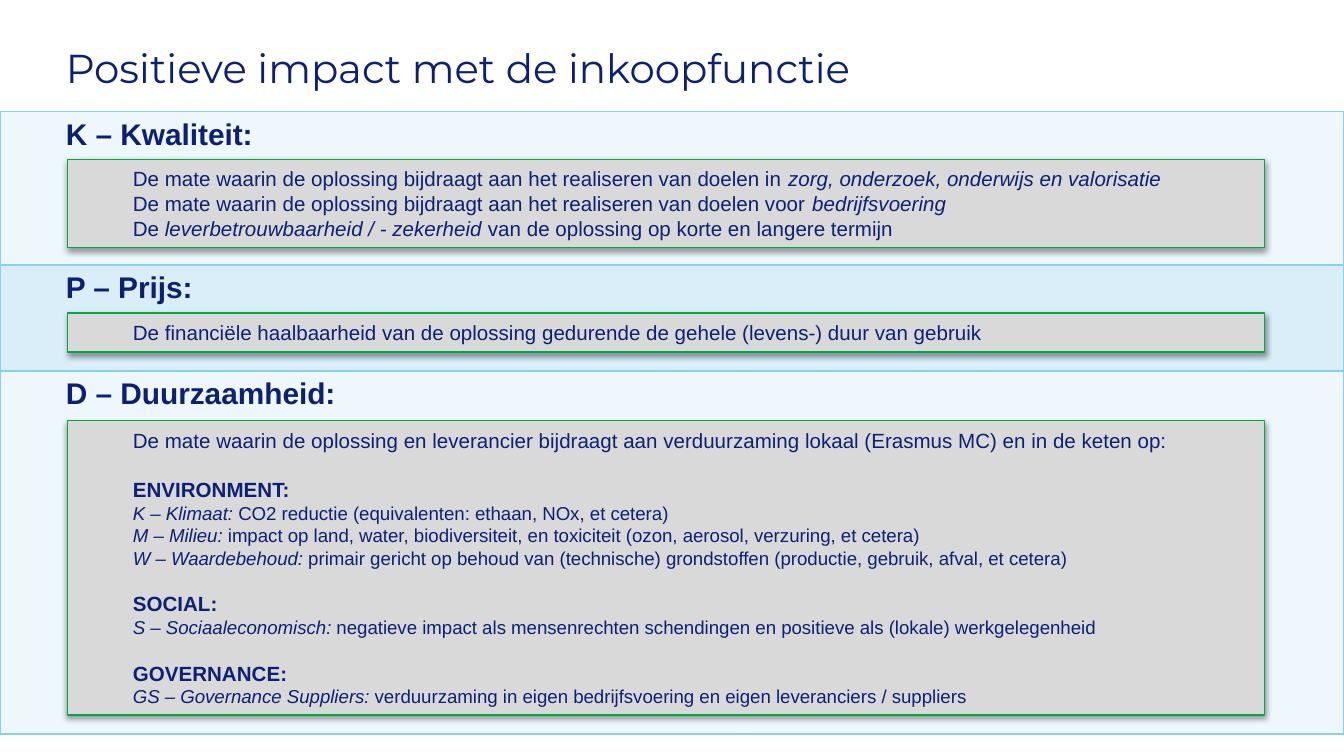
from dataclasses import dataclass

import pptx
import pptx.dml.color
import pptx.enum.shapes
import pptx.enum.text
import pptx.oxml
import pptx.oxml.ns
import pptx.util

EMU_PER_PX = 4572
WIDTH, HEIGHT = 2000, 1125
TABLE_TOP = 166
BOX_LEFT, BOX_WIDTH = 100, 1782
TEXT_INDENT = 78

COLORS = {
    "navy": "0C2074",
    "sky": "86D2ED",
    "pale": "EDF7FC",
    "light": "D9EEF8",
    "grey": "D9D9D9",
    "green": "00AA41",
    "black": "000000",
}


@dataclass(frozen=True)
class Run:
    text: str
    italic: bool = False


@dataclass(frozen=True)
class Line:
    runs: tuple[Run, ...]
    size: int = 11
    bold: bool = False
    space_before: int = 0


@dataclass(frozen=True)
class Section:
    heading: str
    row_height: int
    fill: str
    box_top: int
    box_height: int
    lines: tuple[Line, ...]


def plain(text: str) -> Line:
    return Line((Run(text),))


def category(text: str, space_before: int) -> Line:
    return Line((Run(text),), bold=True, space_before=space_before)


def criterion(label: str, text: str) -> Line:
    return Line((Run(label, True), Run(text)), size=10)


SECTIONS = (
    Section("K – Kwaliteit:", 228, "pale", 237, 131, (
        Line((Run("De mate waarin de oplossing bijdraagt aan het realiseren van doelen in "),
              Run("zorg, onderzoek, onderwijs en valorisatie", True))),
        Line((Run("De mate waarin de oplossing bijdraagt aan het realiseren van doelen voor "),
              Run("bedrijfsvoering", True))),
        Line((Run("De "), Run("leverbetrouwbaarheid / - zekerheid ", True),
              Run("van de oplossing op korte en langere termijn"))),
    )),
    Section("P – Prijs:", 158, "light", 466, 58, (
        plain("De financiële haalbaarheid van de oplossing gedurende de gehele (levens-) duur van gebruik"),
    )),
    Section("D – Duurzaamheid:", 540, "pale", 626, 438, (
        plain("De mate waarin de oplossing en leverancier bijdraagt aan verduurzaming lokaal "
              "(Erasmus MC) en in de keten op:"),
        category("ENVIRONMENT:", 13),
        criterion("K – Klimaat: ", "CO2 reductie (equivalenten: ethaan, NOx, et cetera)"),
        criterion("M – Milieu: ", "impact op land, water, biodiversiteit, en toxiciteit "
                  "(ozon, aerosol, verzuring, et cetera)"),
        criterion("W – Waardebehoud: ", "primair gericht op behoud van (technische) grondstoffen "
                  "(productie, gebruik, afval, et cetera)"),
        category("SOCIAL:", 12),
        criterion("S – Sociaaleconomisch: ", "negatieve impact als mensenrechten schendingen "
                  "en positieve als (lokale) werkgelegenheid"),
        category("GOVERNANCE:", 12),
        criterion("GS – Governance Suppliers: ", "verduurzaming in eigen bedrijfsvoering "
                  "en eigen leveranciers / suppliers"),
    )),
)


def px(length: int) -> pptx.util.Emu:
    return pptx.util.Emu(length * EMU_PER_PX)


def rgb(name: str) -> pptx.dml.color.RGBColor:
    return pptx.dml.color.RGBColor.from_string(COLORS[name])


def style_paragraph(paragraph, size: float, font_name: str = "Arial", bold: bool = False,
                    indent: int = 0) -> None:
    paragraph.alignment = pptx.enum.text.PP_ALIGN.LEFT
    properties = paragraph._p.get_or_add_pPr()
    properties.set("marL", str(px(indent)))
    properties.set("indent", "0")
    paragraph.font.name = font_name
    paragraph.font.size = pptx.util.Pt(size)
    paragraph.font.bold = bold
    paragraph.font.color.rgb = rgb("navy")


def add_title(slide, text: str) -> None:
    shape = slide.shapes.add_textbox(px(0), px(2), px(WIDTH), px(144))
    frame = shape.text_frame
    frame.word_wrap = True
    frame.margin_left, frame.margin_top = px(98), px(62)
    frame.margin_right, frame.margin_bottom = px(118), px(6)
    frame.text = text
    style_paragraph(frame.paragraphs[0], 21.6, "Montserrat")


def set_borders(cell, color: str) -> None:
    properties = cell._tc.get_or_add_tcPr()
    for position, side in enumerate(("lnL", "lnR", "lnT", "lnB")):
        border = pptx.oxml.parse_xml(
            f'<a:{side} {pptx.oxml.ns.nsdecls("a")} w="{pptx.util.Pt(1)}"><a:solidFill>'
            f'<a:srgbClr val="{COLORS[color]}"/></a:solidFill></a:{side}>')
        properties.insert(position, border)


def add_section_table(slide, sections: tuple[Section, ...]) -> None:
    total = sum(section.row_height for section in sections)
    table = slide.shapes.add_table(
        len(sections), 1, px(0), px(TABLE_TOP), px(WIDTH), px(total)).table
    table.first_row = False
    table.horz_banding = False
    for row, section in zip(table.rows, sections):
        row.height = px(section.row_height)
        cell = row.cells[0]
        cell.text = section.heading
        cell.fill.solid()
        cell.fill.fore_color.rgb = rgb(section.fill)
        set_borders(cell, "sky")
        style_paragraph(cell.text_frame.paragraphs[0], 16, bold=True, indent=TEXT_INDENT)


def add_shadow(shape) -> None:
    shape._element.spPr.append(pptx.oxml.parse_xml(
        f'<a:effectLst {pptx.oxml.ns.nsdecls("a")}>'
        f'<a:outerShdw blurRad="{pptx.util.Pt(3.1)}" dist="{pptx.util.Pt(1.6)}" '
        f'dir="5400000" rotWithShape="0"><a:srgbClr val="{COLORS["black"]}">'
        '<a:alpha val="38000"/></a:srgbClr></a:outerShdw></a:effectLst>'))


def add_section_box(slide, section: Section) -> None:
    shape = slide.shapes.add_shape(
        pptx.enum.shapes.MSO_SHAPE.RECTANGLE,
        px(BOX_LEFT), px(section.box_top), px(BOX_WIDTH), px(section.box_height))
    shape.fill.solid()
    shape.fill.fore_color.rgb = rgb("grey")
    shape.line.color.rgb = rgb("green")
    shape.line.width = pptx.util.Pt(0.75)
    add_shadow(shape)
    frame = shape.text_frame
    frame.word_wrap = True
    frame.vertical_anchor = pptx.enum.text.MSO_ANCHOR.MIDDLE
    for index, line in enumerate(section.lines):
        paragraph = frame.add_paragraph() if index else frame.paragraphs[0]
        if line.space_before:
            paragraph.space_before = pptx.util.Pt(line.space_before)
        style_paragraph(paragraph, line.size, bold=line.bold, indent=TEXT_INDENT)
        for part in line.runs:
            run = paragraph.add_run()
            run.text = part.text
            if part.italic:
                run.font.italic = True


def main() -> None:
    presentation = pptx.Presentation()
    presentation.slide_width = px(WIDTH)
    presentation.slide_height = px(HEIGHT)
    slide = presentation.slides.add_slide(presentation.slide_layouts[6])
    add_section_table(slide, SECTIONS)
    add_title(slide, "Positieve impact met de inkoopfunctie")
    for section in SECTIONS:
        add_section_box(slide, section)
    presentation.save("out.pptx")


if __name__ == "__main__":
    main()
